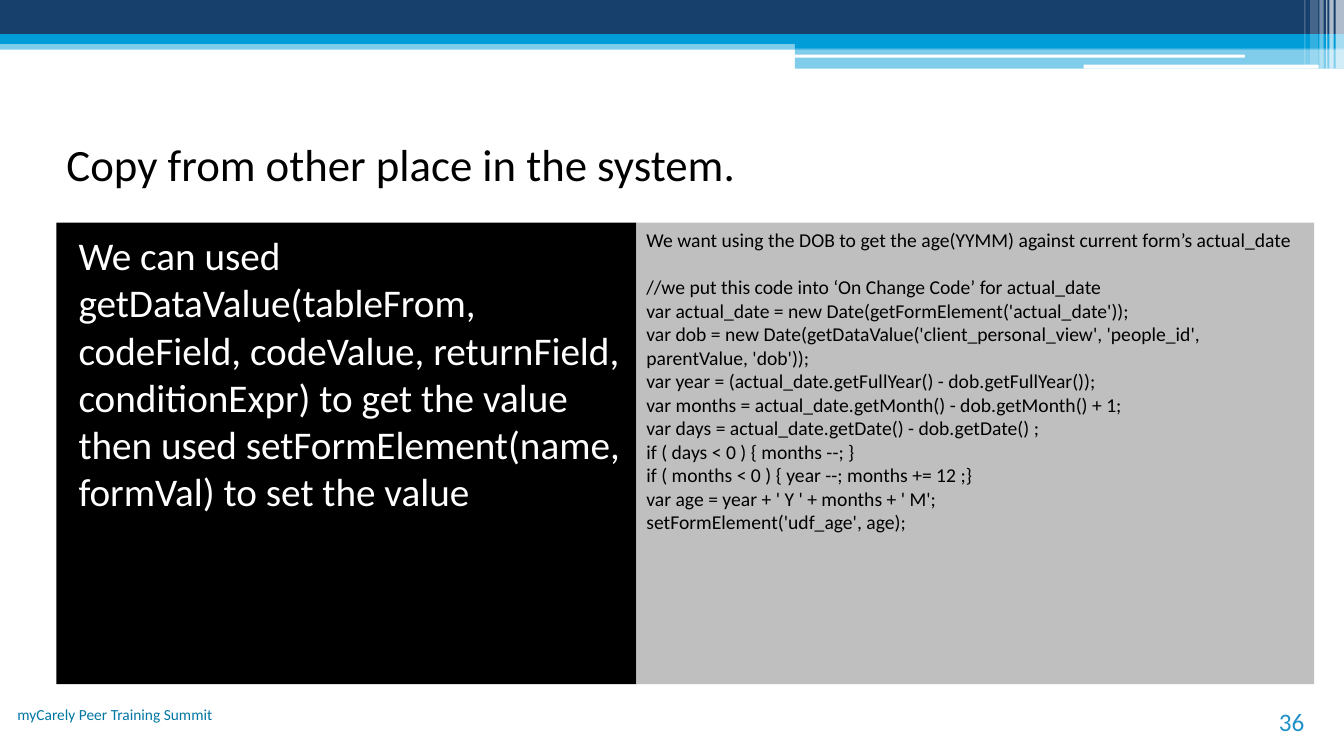
from lxml import etree
from pptx import Presentation
from pptx.dml.color import RGBColor
from pptx.enum.shapes import MSO_SHAPE
from pptx.enum.text import MSO_ANCHOR, PP_ALIGN
from pptx.oxml.ns import qn
from pptx.util import Cm, Pt

RECT, ROUNDED = MSO_SHAPE.RECTANGLE, MSO_SHAPE.ROUNDED_RECTANGLE
TOP, MIDDLE, BOTTOM = MSO_ANCHOR.TOP, MSO_ANCHOR.MIDDLE, MSO_ANCHOR.BOTTOM
LEFT, RIGHT = PP_ALIGN.LEFT, PP_ALIGN.RIGHT

FONT = "Calibri"
COLORS = {
    "navy": "17406D", "blue": "009DD9", "white": "FFFFFF", "black": "000000",
    "gray": "BFBFBF", "footer": "0076A3", "number": "2191C9",
}
SLIDE_W, SLIDE_H = 33.87, 19.05

TITLE = "Copy from other place in the system."
EXPLANATION = (
    "We can used getDataValue(tableFrom, codeField, codeValue, returnField, "
    "conditionExpr) to get the value then used setFormElement(name, formVal) "
    "to set the value"
)
GOAL = "We want using the DOB to get the age(YYMM) against current form’s actual_date"
CODE = [
    "//we put this code into ‘On Change Code’ for actual_date",
    "var actual_date = new Date(getFormElement('actual_date'));",
    "var dob = new Date(getDataValue('client_personal_view', 'people_id', parentValue, 'dob'));",
    "var year = (actual_date.getFullYear() - dob.getFullYear());",
    "var months = actual_date.getMonth() - dob.getMonth() + 1;",
    "var days = actual_date.getDate() - dob.getDate() ;",
    "if ( days < 0 ) { months --; }",
    "if ( months < 0 ) { year --; months += 12 ;}",
    "var age = year + ' Y ' + months + ' M';",
    "setFormElement('udf_age', age);",
]


def rgb(name):
    return RGBColor.from_string(COLORS[name])


def add_block(s, box, color, opacity=100, kind=RECT):
    sp = s.shapes.add_shape(kind, *map(Cm, box))
    sp.shadow.inherit = False
    sp.line.fill.background()
    sp.fill.solid()
    sp.fill.fore_color.rgb = rgb(color)
    if opacity < 100:
        clr = sp.fill._xPr.find(".//" + qn("a:srgbClr"))
        etree.SubElement(clr, qn("a:alpha")).set("val", str(opacity * 1000))
    return sp


def write(sp, lines, size, color, align=LEFT, anchor=TOP):
    tf = sp.text_frame
    tf.word_wrap = True
    tf.vertical_anchor = anchor
    for i, line in enumerate(lines):
        p = tf.paragraphs[0] if i == 0 else tf.add_paragraph()
        p.alignment = align
        r = p.add_run()
        r.text = line
        r.font.name, r.font.size = FONT, Pt(size)
        r.font.color.rgb = rgb(color)
    return tf


def add_header(s, x, y, w):
    # Full-width bands, then the stepped bands on the right
    step = 20.03
    bands = [
        (0, 1.02, w, 0.23, "blue", 50),
        (0, 0, w, 0.86, "navy", 100),
        (0, 0.86, w, 0.25, "blue", 100),
        (step, 1, w - step, 0.23, "blue", 100),
        (step, 1.23, w - step, 0.5, "blue", 50),
    ]
    for dx, dy, bw, bh, color, opacity in bands:
        add_block(s, (x + dx, y + dy, bw, bh), color, opacity)

    # White slits
    for dx, dy, bw, bh in [(20.02, 1.38, 11.35, 0.07), (27.31, 1.63, 5.92, 0.1)]:
        add_block(s, (x + dx, y + dy, bw, bh), "white", kind=ROUNDED)

    # Translucent vertical stripes, given by distance from the right edge
    stripes = [
        (0.21, 0.21, 1.73, 65), (0.37, 0.11, 1.73, 65), (0.45, 0.03, 1.73, 60),
        (0.62, 0.11, 1.73, 40), (0.85, 0.2, 1.63, 20), (1, 0.03, 1.63, 30),
    ]
    for from_right, bw, bh, opacity in stripes:
        add_block(s, (x + w - from_right, y, bw, bh), "white", opacity)


def add_title(s, x, y, w, h):
    sp = s.shapes.title
    sp.left, sp.top, sp.width, sp.height = map(Cm, (x, y, w, h))
    write(sp, [TITLE], 32, "black", anchor=MIDDLE)


def add_panels(s, x, y, w, h):
    left_w = 14.62
    explanation = add_block(s, (x, y, left_w, h), "black")
    tf = write(explanation, [EXPLANATION], 28, "white")
    tf.margin_left, tf.margin_top = Cm(0.56), Cm(0.23)

    code = add_block(s, (x + left_w, y, w - left_w, h), "gray")
    tf = write(code, [GOAL] + CODE, 14, "black")
    tf.paragraphs[1].space_before = Pt(17)


def add_footer(s, x, y, w):
    sp = s.shapes.add_textbox(Cm(x), Cm(y), Cm(5.61), Cm(1.27))
    write(sp, ["myCarely Peer Training Summit"], 11, "footer", RIGHT)
    number_w = 2.82
    sp = s.shapes.add_textbox(Cm(x + w - number_w), Cm(y), Cm(number_w), Cm(1.04))
    write(sp, ["36"], 18, "number", RIGHT, BOTTOM)


def main():
    prs = Presentation()
    prs.slide_width, prs.slide_height = Cm(SLIDE_W), Cm(SLIDE_H)
    s = prs.slides.add_slide(prs.slide_layouts[5])
    add_header(s, 0, 0, SLIDE_W)
    add_title(s, 1.42, 2.64, 30.05, 2.97)
    add_panels(s, 1.42, 5.61, 31.7, 11.63)
    add_footer(s, 0, 17.64, 33.12)
    prs.save("out.pptx")


if __name__ == "__main__":
    main()
